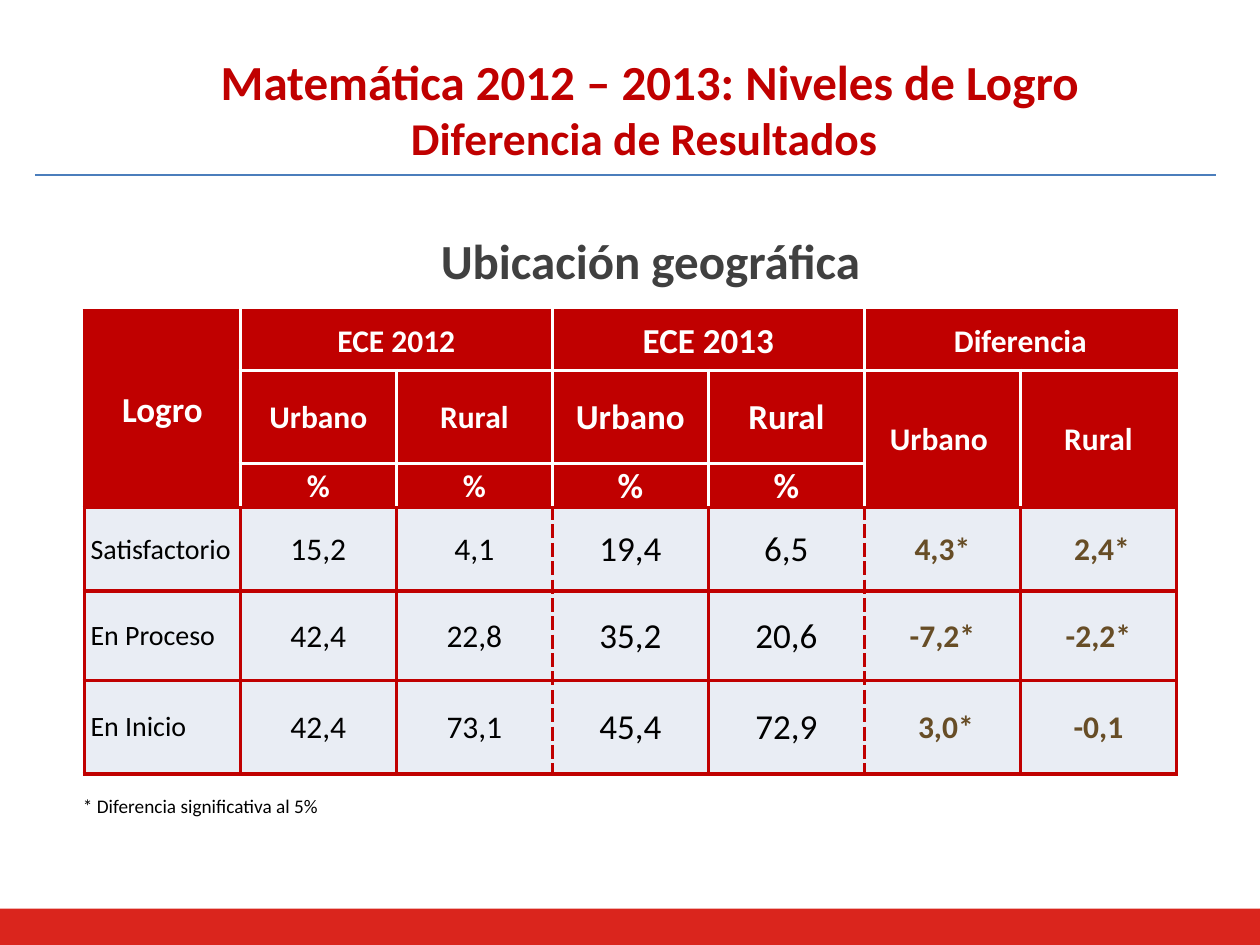
from lxml import etree
from pptx import Presentation
from pptx.dml.color import RGBColor
from pptx.enum.shapes import MSO_CONNECTOR, MSO_SHAPE
from pptx.enum.text import MSO_ANCHOR, MSO_AUTO_SIZE, PP_ALIGN
from pptx.oxml.ns import qn
from pptx.util import Pt

LEFT, CENTER = PP_ALIGN.LEFT, PP_ALIGN.CENTER
MIDDLE = MSO_ANCHOR.MIDDLE
NO_AUTOFIT = MSO_AUTO_SIZE.NONE
RECTANGLE = MSO_SHAPE.RECTANGLE
STRAIGHT = MSO_CONNECTOR.STRAIGHT

COLORS = {
    "red": "C00000", "bar": "DA251D", "rule": "4B7EBC", "gray": "404040",
    "white": "FFFFFF", "black": "000000", "brown": "674D26", "pale": "E9EDF4",
}
FONT = "Calibri"
PLAIN_TABLE_STYLE = "{2D5ABB26-0587-4C30-8999-92F81FD0307C}"

TITLE = [("Matemática 2012 – 2013: Niveles de Logro", 28), ("Diferencia de Resultados ", 26)]
SUBTITLE = "Ubicación geográfica"
FOOTNOTE = "* Diferencia significativa al 5%"
ROWS = [
    ["Logro", "ECE 2012", None, "ECE 2013", None, "Diferencia", None],
    [None, "Urbano", "Rural", "Urbano", "Rural", "Urbano ", "Rural"],
    [None, "%", "%", "%", "%", None, None],
    ["Satisfactorio", "15,2", "4,1", "19,4", "6,5", "4,3*", " 2,4*"],
    ["En Proceso", "42,4", "22,8", "35,2", "20,6", "-7,2*", "-2,2*"],
    ["En Inicio", "42,4", "73,1", "45,4", "72,9", " 3,0*", "-0,1"],
]
SPANS = {(0, 0): (3, 1), (0, 1): (1, 2), (0, 3): (1, 2), (0, 5): (1, 2),
         (1, 5): (2, 1), (1, 6): (2, 1)}
ROW_HEIGHTS = [34, 53.2, 25.2, 47.6, 51.2, 53.4]
COLUMN_WIDTH = 89.15
HEADER_ROWS = 3
DASHED_EDGES = (3, 5)
LARGE_COLUMNS = (3, 4)
DIFFERENCE_COLUMN = 5


def rgb(name):
    """Return the named colour."""
    return RGBColor.from_string(COLORS[name])


def write(paragraph, text, size=18, color="black", bold=False, align=LEFT):
    """Write formatted text into a paragraph."""
    paragraph.alignment = align
    run = paragraph.add_run()
    run.text = text
    run.font.name = FONT
    run.font.size = Pt(size)
    run.font.bold = bold
    run.font.color.rgb = rgb(color)


def add_label(slide, box, text, wrap=True, **text_format):
    """Add a text box with one paragraph."""
    frame = slide.shapes.add_textbox(*map(Pt, box)).text_frame
    frame.word_wrap = wrap
    write(frame.paragraphs[0], text, **text_format)


def set_border(cell, side, color, dash):
    """Draw one side of a table cell."""
    properties = cell._tc.get_or_add_tcPr()
    line = etree.SubElement(properties, qn(f"a:ln{side}"), w=str(Pt(2.25)))
    fill = etree.SubElement(line, qn("a:solidFill"))
    etree.SubElement(fill, qn("a:srgbClr"), val=COLORS[color])
    etree.SubElement(line, qn("a:prstDash"), val=dash)


def set_borders(cell, row, column):
    """Draw white lines inside the header and red ones elsewhere."""
    height, width = SPANS.get((row, column), (1, 1))
    header = row < HEADER_ROWS
    for side, edge in (("L", column), ("R", column + width)):
        inner = header and 0 < edge < len(ROWS[0])
        dashed = not header and edge in DASHED_EDGES
        set_border(cell, side, "white" if inner else "red", "sysDash" if dashed else "solid")
    for side, edge in (("T", row), ("B", row + height)):
        set_border(cell, side, "white" if 0 < edge < HEADER_ROWS else "red", "solid")


def cell_format(row, column):
    """Return the text format for a table position."""
    header = row < HEADER_ROWS
    large = column in LARGE_COLUMNS or (header and column == 0)
    if header:
        return {"size": 20 if large else 18, "color": "white", "bold": True, "align": CENTER}
    if column == 0:
        return {"size": 16}
    difference = column >= DIFFERENCE_COLUMN
    return {"size": 20 if large else 18, "color": "brown" if difference else "black",
            "bold": difference, "align": CENTER}


def add_results(slide):
    """Add the table of results."""
    columns = len(ROWS[0])
    frame = slide.shapes.add_table(len(ROWS), columns, Pt(48.2), Pt(177.8),
                                   Pt(COLUMN_WIDTH * columns), Pt(sum(ROW_HEIGHTS)))
    table = frame.table
    table._tbl.tblPr.find(qn("a:tableStyleId")).text = PLAIN_TABLE_STYLE
    for column in table.columns:
        column.width = Pt(COLUMN_WIDTH)
    for row, height in zip(table.rows, ROW_HEIGHTS):
        row.height = Pt(height)
    for (row, column), (height, width) in SPANS.items():
        table.cell(row, column).merge(table.cell(row + height - 1, column + width - 1))
    for row, texts in enumerate(ROWS):
        for column, text in enumerate(texts):
            cell = table.cell(row, column)
            label = row >= HEADER_ROWS and column == 0
            cell.margin_left = cell.margin_right = Pt(3.6 if label else 0.72)
            cell.margin_top = Pt(0 if label else 0.72)
            cell.margin_bottom = Pt(0)
            cell.vertical_anchor = MIDDLE
            if text is not None:
                set_borders(cell, row, column)
                write(cell.text_frame.paragraphs[0], text, **cell_format(row, column))
            cell.fill.solid()
            cell.fill.fore_color.rgb = rgb("red" if row < HEADER_ROWS else "pale")


def main():
    """Build the slide and save it."""
    presentation = Presentation()
    presentation.slide_width, presentation.slide_height = Pt(720), Pt(540)
    slide = presentation.slides.add_slide(presentation.slide_layouts[5])

    title = slide.shapes.title
    title.left, title.top, title.width, title.height = map(Pt, (70.6, 16.6, 601.2, 90))
    frame = title.text_frame
    frame.auto_size = NO_AUTOFIT
    frame.vertical_anchor = MIDDLE
    for index, (text, size) in enumerate(TITLE):
        paragraph = frame.add_paragraph() if index else frame.paragraphs[0]
        write(paragraph, text, size=size, color="red", bold=True, align=CENTER)

    bar = slide.shapes.add_shape(RECTANGLE, Pt(0), Pt(519.2), Pt(720), Pt(20.8))
    bar.shadow.inherit = False
    bar.fill.solid()
    bar.fill.fore_color.rgb = rgb("bar")
    bar.line.fill.background()

    rule = slide.shapes.add_connector(STRAIGHT, Pt(20), Pt(100), Pt(694.8), Pt(100))
    rule.line.color.rgb = rgb("rule")
    rule.line.width = Pt(0.75)
    etree.SubElement(rule._element.spPr, qn("a:effectLst"))

    add_label(slide, (244.8, 128, 257, 41), SUBTITLE, wrap=False, size=28, color="gray", bold=True)
    add_results(slide)
    add_label(slide, (40.3, 450.5, 461.5, 21), FOOTNOTE, size=11)
    presentation.save("out.pptx")


if __name__ == "__main__":
    main()
